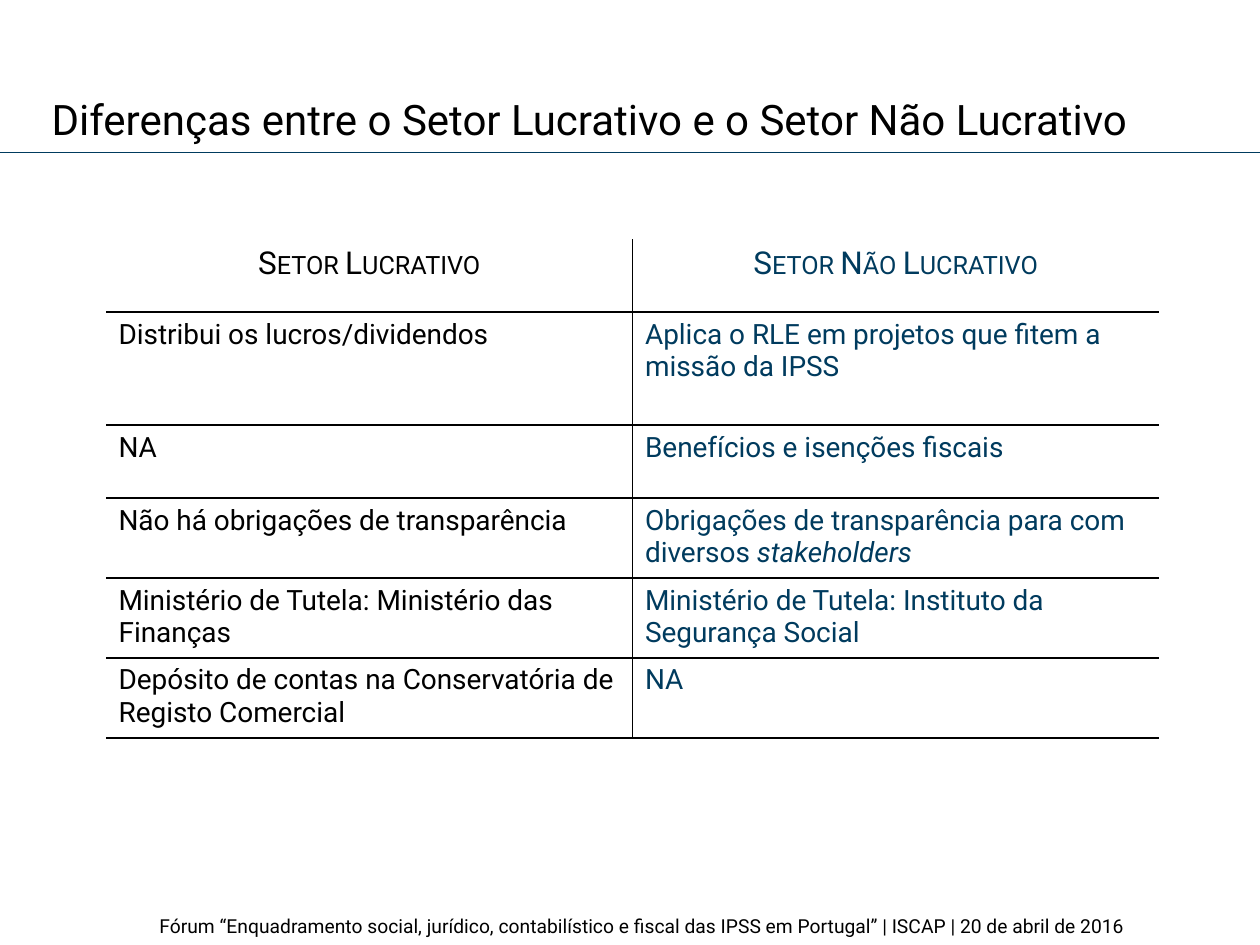
import pptx
import pptx.dml.color
import pptx.enum.shapes
import pptx.enum.text
import pptx.oxml
import pptx.oxml.ns
import pptx.util

PX = 914400 / 126
PAGE_SIZE = (1260, 945)
FONT = "Roboto"
COLORS = {"black": "000000", "navy": "003B5E", "white": "FFFFFF"}
ALIGN = pptx.enum.text.PP_ALIGN

HEADER = ("Setor Lucrativo", "Setor Não Lucrativo")
# Each cell is a list of (text, italic) spans.
ROWS = [
    ([("Distribui os lucros/dividendos", False)],
     [("Aplica o RLE em projetos que fitem a missão da IPSS", False)]),
    ([("NA", False)],
     [("Benefícios e isenções fiscais", False)]),
    ([("Não há obrigações de transparência", False)],
     [("Obrigações de transparência para com diversos ", False), ("stakeholders", True)]),
    ([("Ministério de Tutela: Ministério das Finanças", False)],
     [("Ministério de Tutela: Instituto da Segurança Social", False)]),
    ([("Depósito de contas na Conservatória de Registo Comercial", False)],
     [("NA", False)]),
]
ROW_HEIGHTS = (73, 113, 73, 80, 80, 80)


def emu(*lengths):
    return [pptx.util.Emu(round(length * PX)) for length in lengths]


def rgb(name):
    return pptx.dml.color.RGBColor.from_string(COLORS[name])


def set_all(target, values):
    for name, value in values.items():
        setattr(target, name, value)


def add_span(para, text, size, color="black", italic=False):
    span = para.add_run()
    span.text = text
    set_all(span.font, {"name": FONT, "size": pptx.util.Pt(size), "italic": italic})
    span.font.color.rgb = rgb(color)
    return span


def fill_frame(frame, text, size, wrap):
    set_all(frame, {
        "word_wrap": wrap,
        "auto_size": pptx.enum.text.MSO_AUTO_SIZE.NONE,
        "vertical_anchor": pptx.enum.text.MSO_ANCHOR.TOP,
    })
    para = frame.paragraphs[0]
    para.alignment = ALIGN.LEFT
    add_span(para, text, size)


def place_title(page, box, text):
    title = page.shapes.title
    set_all(title, dict(zip(("left", "top", "width", "height"), emu(*box))))
    fill_frame(title.text_frame, text, 24, False)


def add_rule(page, box):
    left, top, width, height = box
    rule = page.shapes.add_connector(
        pptx.enum.shapes.MSO_CONNECTOR.STRAIGHT,
        *emu(left, top, left + width, top + height))
    rule.line.color.rgb = rgb("navy")
    rule.line.width = pptx.util.Pt(0.5)
    properties = rule._element.spPr
    properties.append(properties.makeelement(pptx.oxml.ns.qn("a:effectLst"), {}))


def add_footer(page, box, text):
    footer = page.shapes.add_textbox(*emu(*box))
    fill_frame(footer.text_frame, text, 11, True)


def set_borders(cell, shown):
    """Draw a 1 pt black line on the shown sides (from L, R, T, B) and none elsewhere."""
    namespace = pptx.oxml.ns.nsdecls("a")
    solid = f'<a:solidFill><a:srgbClr val="{COLORS["black"]}"/></a:solidFill>'
    properties = cell._tc.get_or_add_tcPr()
    for index, side in enumerate("LRTB"):
        paint = solid if side in shown else "<a:noFill/>"
        properties.insert(index, pptx.oxml.parse_xml(
            f'<a:ln{side} {namespace} w="12700">{paint}</a:ln{side}>'))


def add_comparison(page, box):
    """Two-column table ruled between its columns and below each row."""
    shape = page.shapes.add_table(len(ROW_HEIGHTS), len(HEADER), *emu(*box))
    table = shape.table
    set_all(table, {"first_row": False, "horz_banding": False})
    for row, height in zip(table.rows, emu(*ROW_HEIGHTS)):
        row.height = height
    contents = [[[(text, False)] for text in HEADER], *ROWS]
    for row_index, row in enumerate(contents):
        is_header = row_index == 0
        for column, spans in enumerate(row):
            cell = table.cell(row_index, column)
            cell.fill.solid()
            cell.fill.fore_color.rgb = rgb("white")
            set_borders(cell, "RL"[column] + ("B" if is_header else "TB"))
            para = cell.text_frame.paragraphs[0]
            para.alignment = ALIGN.CENTER if is_header else ALIGN.LEFT
            for text, italic in spans:
                span = add_span(para, text, 18 if is_header else 16,
                                ("black", "navy")[column], italic)
                if is_header:
                    span._r.get_or_add_rPr().set("cap", "small")


def main():
    deck = pptx.Presentation()
    deck.slide_width, deck.slide_height = emu(*PAGE_SIZE)
    page = deck.slides.add_slide(deck.slide_layouts.get_by_name("Title Only"))
    add_footer(page, (147, 908, 1212, 37),
               "Fórum “Enquadramento social, jurídico, contabilístico e fiscal "
               "das IPSS em Portugal” | ISCAP | 20 de abril de 2016")
    add_rule(page, (0, 152, PAGE_SIZE[0], 0))
    place_title(page, (39, 87, 1120, 63),
                "Diferenças entre o Setor Lucrativo e o Setor Não Lucrativo")
    add_comparison(page, (106, 239, 1053, sum(ROW_HEIGHTS)))
    deck.save("out.pptx")


if __name__ == "__main__":
    main()
